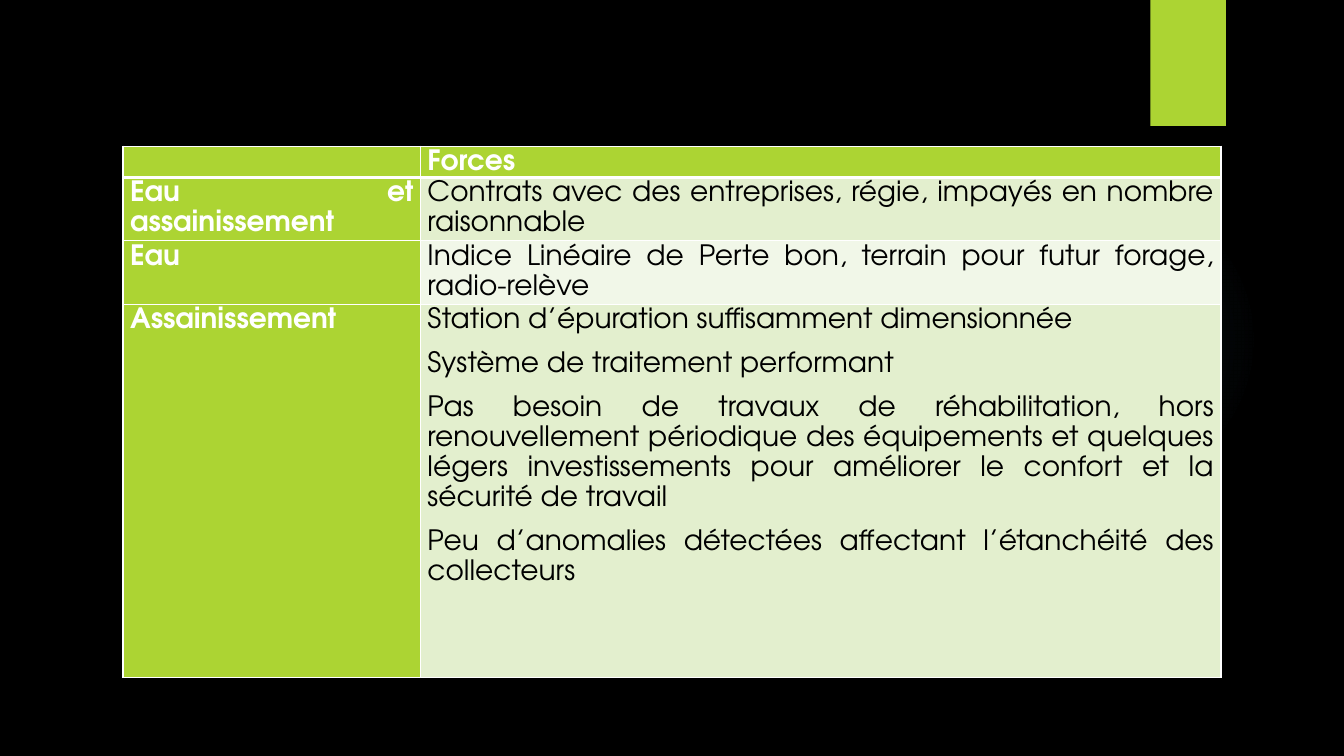
from dataclasses import dataclass

from lxml import etree
from pptx import Presentation
from pptx.dml.color import RGBColor
from pptx.enum.shapes import MSO_SHAPE
from pptx.enum.text import PP_ALIGN
from pptx.oxml import parse_xml
from pptx.oxml.ns import nsdecls, qn
from pptx.util import Inches, Pt

FONT = "TeX Gyre Adventor"
BLACK, WHITE, GREEN, GLOW = "000000", "FFFFFF", "ACD433", "7AC4F0"
COLUMN_WIDTHS = (2.95, 7.94)
PARAGRAPH_FORMAT = {
    "alignment": PP_ALIGN.JUSTIFY,
    "line_spacing": 1.15,
    "space_after": Pt(10),
}
CELL_FORMAT = {
    "margin_left": Inches(0.07),
    "margin_right": Inches(0.07),
    "margin_top": 0,
    "margin_bottom": 0,
}


@dataclass
class ThemeRow:
    height: float
    theme: str
    strengths: tuple[str, ...]
    fill: str


ROWS = (
    ThemeRow(0.31, "", ("Forces",), GREEN),
    ThemeRow(
        0.63,
        "Eau et assainissement",
        ("Contrats avec des entreprises, régie, impayés en nombre raisonnable",),
        "E3EFCE",
    ),
    ThemeRow(
        0.63,
        "Eau",
        ("Indice Linéaire de Perte bon, terrain pour futur forage, radio-relève",),
        "F1F7E8",
    ),
    ThemeRow(
        3.7,
        "Assainissement",
        (
            "Station d’épuration suffisamment dimensionnée",
            "Système de traitement performant",
            "Pas besoin de travaux de réhabilitation, hors renouvellement périodique "
            "des équipements et quelques légers investissements pour améliorer le "
            "confort et la sécurité de travail",
            "Peu d’anomalies détectées affectant l’étanchéité des collecteurs",
        ),
        "E3EFCE",
    ),
)


def rgb(color: str) -> RGBColor:
    return RGBColor.from_string(color)


def set_format(target, values: dict) -> None:
    for name, value in values.items():
        setattr(target, name, value)


def add_plain_shape(slide, kind, left: float, top: float, width: float, height: float):
    shape = slide.shapes.add_shape(
        kind, Inches(left), Inches(top), Inches(width), Inches(height)
    )
    shape.shadow.inherit = False
    shape.line.fill.background()
    shape.fill.solid()
    shape.fill.fore_color.rgb = rgb(GREEN)
    return shape


def fill_with_glow(shape) -> None:
    """Replace the solid fill with a radial fade to transparent."""
    stops = "".join(
        f'<a:gs pos="{position * 1000}"><a:srgbClr val="{GLOW}">'
        f'<a:alpha val="{opacity * 1000}"/></a:srgbClr></a:gs>'
        for position, opacity in ((0, 7), (36, 6), (69, 0))
    )
    gradient = parse_xml(
        f'<a:gradFill {nsdecls("a")}><a:gsLst>{stops}</a:gsLst><a:path path="circle">'
        '<a:fillToRect l="50000" t="50000" r="50000" b="50000"/></a:path></a:gradFill>'
    )
    solid = shape.fill._xPr.find(qn("a:solidFill"))
    solid.getparent().replace(solid, gradient)


def add_borders(cell, widths: dict[str, int]) -> None:
    properties = cell._tc.get_or_add_tcPr()
    for side, width in widths.items():
        line = etree.SubElement(properties, qn(f"a:ln{side}"), w=str(Pt(width)))
        solid = etree.SubElement(line, qn("a:solidFill"))
        etree.SubElement(solid, qn("a:srgbClr"), val=WHITE)


def write_cell(cell, texts: tuple[str, ...], color: str, bold: bool) -> None:
    frame = cell.text_frame
    for index, text in enumerate(texts):
        paragraph = frame.add_paragraph() if index else frame.paragraphs[0]
        set_format(paragraph, PARAGRAPH_FORMAT)
        if not text:
            etree.SubElement(paragraph._p, qn("a:endParaRPr"), sz="1000")
            continue
        run = paragraph.add_run()
        run.text = text
        set_format(run.font, {"name": FONT, "size": Pt(20), "bold": bold})
        run.font.color.rgb = rgb(color)


def add_strengths_table(slide) -> None:
    table = slide.shapes.add_table(
        len(ROWS),
        len(COLUMN_WIDTHS),
        Inches(1.22),
        Inches(1.45),
        Inches(sum(COLUMN_WIDTHS)),
        Inches(sum(row.height for row in ROWS)),
    ).table
    for column, width in zip(table.columns, COLUMN_WIDTHS):
        column.width = Inches(width)
    for row_index, row in enumerate(ROWS):
        table.rows[row_index].height = Inches(row.height)
        borders = {
            "L": 1,
            "R": 1,
            "T": 3 if row_index == 1 else 1,
            "B": 3 if row_index == 0 else 1,
        }
        contents = (((row.theme,), GREEN), (row.strengths, row.fill))
        for column_index, (texts, fill) in enumerate(contents):
            cell = table.cell(row_index, column_index)
            set_format(cell, CELL_FORMAT)
            add_borders(cell, borders)
            cell.fill.solid()
            cell.fill.fore_color.rgb = rgb(fill)
            on_green = fill == GREEN
            write_cell(cell, texts, WHITE if on_green else BLACK, on_green)


def main() -> None:
    presentation = Presentation()
    presentation.slide_width = Inches(13.33)
    presentation.slide_height = Inches(7.5)
    slide = presentation.slides.add_slide(presentation.slide_layouts[6])
    slide.background.fill.solid()
    slide.background.fill.fore_color.rgb = rgb(BLACK)

    fill_with_glow(add_plain_shape(slide, MSO_SHAPE.OVAL, 9.41, 1.83, 3.08, 3.08))
    add_plain_shape(slide, MSO_SHAPE.RECTANGLE, 11.41, 0, 0.75, 1.25)
    add_strengths_table(slide)
    presentation.save("out.pptx")


if __name__ == "__main__":
    main()
